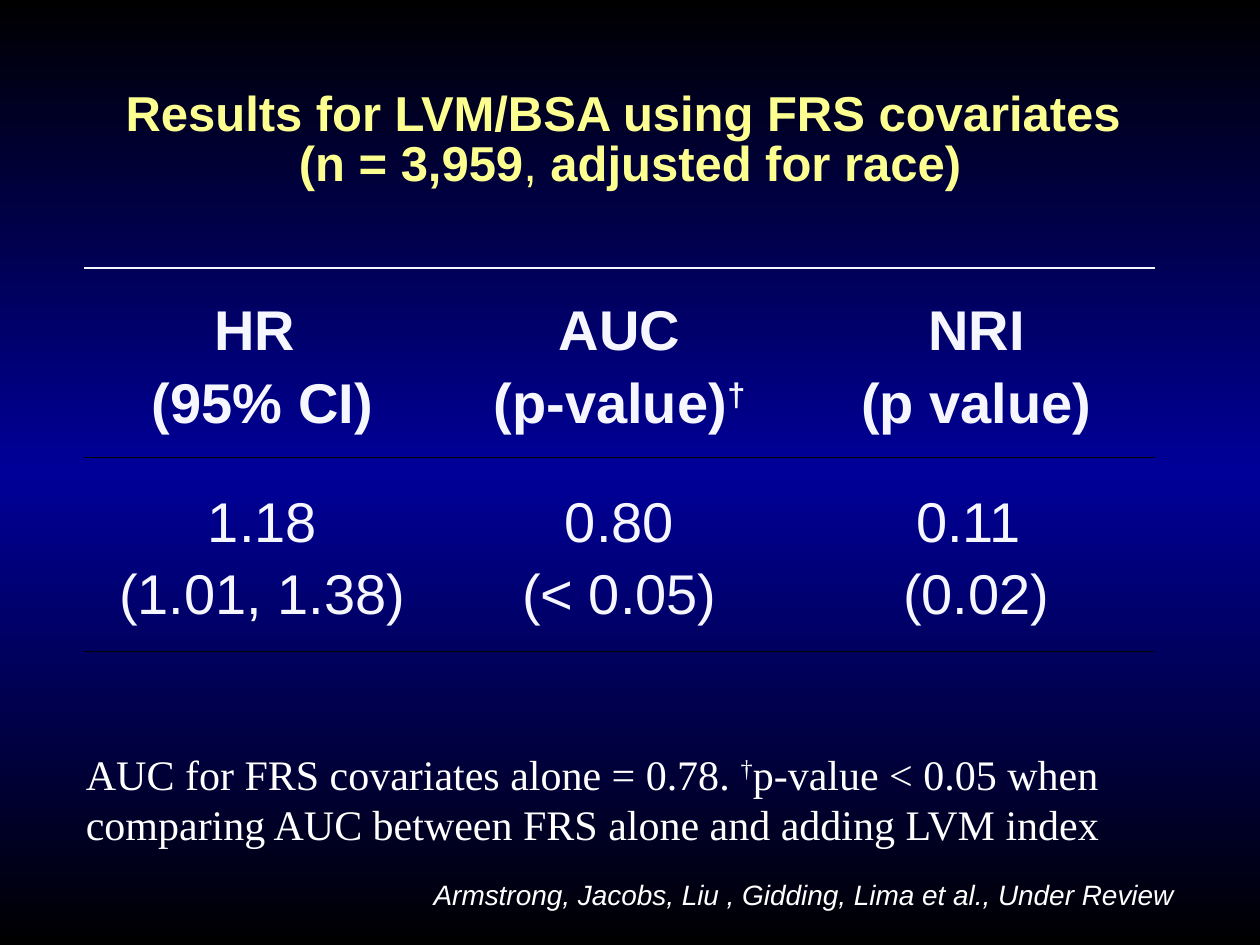
"""Build a slide with a table of LVM/BSA results using FRS covariates."""
from copy import deepcopy

from lxml import etree
from pptx import Presentation
from pptx.dml.color import RGBColor
from pptx.enum.text import MSO_ANCHOR, MSO_AUTO_SIZE, PP_ALIGN
from pptx.oxml.ns import qn
from pptx.util import Pt

CENTER, RIGHT = PP_ALIGN.CENTER, PP_ALIGN.RIGHT
MIDDLE = MSO_ANCHOR.MIDDLE
NO_FIT, GROW = MSO_AUTO_SIZE.NONE, MSO_AUTO_SIZE.SHAPE_TO_FIT_TEXT
PLAIN = "{2D5ABB26-0587-4C30-8999-92F81FD0307C}"

THEME = {
    "back": ["000000", "000099", "000000"],
    "rule": {"top": "F6F6FF", "low": "000000"},
    "title": ("Arial", 28, "FCFF90"),
    "cell": ("Arial", 32, "F6F6FF"),
    "note": ("Times New Roman", 24, "FFFFFF"),
    "cite": ("Arial", 16, "FFFFFF"),
}


def add_run(para, text, style, bold=False, italic=False):
    face, size, color = THEME[style]
    run = para.add_run()
    run.text = text
    font = run.font
    font.name, font.size = face, Pt(size)
    font.bold, font.italic = bold, italic
    font.color.rgb = RGBColor.from_string(color)
    if text == "†":
        run._r.get_or_add_rPr().set("baseline", "30000")


def add_rule(cell, side, color):
    line = etree.Element(qn("a:" + side), w=str(Pt(1)))
    fill = etree.SubElement(line, qn("a:solidFill"))
    etree.SubElement(fill, qn("a:srgbClr"), val=color)
    props = cell._tc.get_or_add_tcPr()
    props.insert(len(props.findall(qn("a:lnT"))), line)


deck = Presentation()
deck.slide_width, deck.slide_height = Pt(720), Pt(540)
slide = deck.slides.add_slide(deck.slide_layouts[5])

fill = slide.background.fill
fill.gradient()
fill.gradient_angle = 90
stops = fill._fill._gradFill.find(qn("a:gsLst"))
stops.insert(1, deepcopy(stops[0]))
for stop, color, pos in zip(fill.gradient_stops, THEME["back"], (0, 0.5, 1)):
    stop.color.rgb = RGBColor.from_string(color)
    stop.position = pos

title = slide.shapes.title
title.left, title.top, title.width, title.height = Pt(0), Pt(36), Pt(720), Pt(90)
frame = title.text_frame
frame.word_wrap, frame.auto_size = False, NO_FIT
frame.vertical_anchor = MIDDLE
frame.margin_left = frame.margin_right = Pt(6)
frame.margin_top = frame.margin_bottom = Pt(2)
para = frame.paragraphs[0]
para.alignment, para.line_spacing = CENTER, 0.85
add_run(para, "Results for LVM/BSA using FRS covariates ", "title", bold=True)
para.add_line_break()
add_run(para, "(n = 3,959", "title", bold=True)
add_run(para, ", ", "title")
add_run(para, "adjusted for race)", "title", bold=True)

ROWS = [
    [["HR ", "(95% CI)"], ["AUC", "(p-value)†"], ["NRI", "(p value)"]],
    [["1.18", "(1.01, 1.38)"], ["0.80", "(< 0.05)"], ["0.11 ", "(0.02)"]],
]
holder = slide.shapes.add_table(2, 3, Pt(48), Pt(153.25), Pt(612), Pt(219))
holder._element.find(".//" + qn("a:tableStyleId")).text = PLAIN
table = holder.table
table.first_row = table.horz_banding = False
for row, high in zip(table.rows, (108.25, 110.75)):
    row.height = Pt(high)
for r, row in enumerate(ROWS):
    for c, lines in enumerate(row):
        cell = table.cell(r, c)
        cell.vertical_anchor = MIDDLE
        cell.margin_left = cell.margin_right = Pt(5)
        cell.margin_top = cell.margin_bottom = Pt(0)
        cell.fill.background()
        add_rule(cell, "lnT", THEME["rule"]["low" if r else "top"])
        add_rule(cell, "lnB", THEME["rule"]["low"])
        frame = cell.text_frame
        for i, line in enumerate(lines):
            para = frame.add_paragraph() if i else frame.paragraphs[0]
            para.alignment, para.line_spacing = CENTER, 1.15
            text, mark, rest = line.partition("†")
            add_run(para, text, "cell", bold=r == 0)
            if mark:
                add_run(para, mark, "cell", bold=r == 0)

note = slide.shapes.add_textbox(Pt(42), Pt(424), Pt(618), Pt(65.5)).text_frame
note.word_wrap, note.auto_size = True, GROW
para = note.paragraphs[0]
for text in (
    "AUC for FRS covariates alone = 0.78. ",
    "†",
    "p-value < 0.05 when comparing AUC between FRS alone and adding LVM index",
):
    add_run(para, text, "note")

cite = slide.shapes.add_textbox(Pt(192), Pt(498), Pt(486), Pt(26.5)).text_frame
cite.word_wrap, cite.auto_size = True, GROW
para = cite.paragraphs[0]
para.alignment = RIGHT
source = "Armstrong, Jacobs, Liu , Gidding, Lima et al., Under Review"
add_run(para, source, "cite", italic=True)

deck.save("out.pptx")
